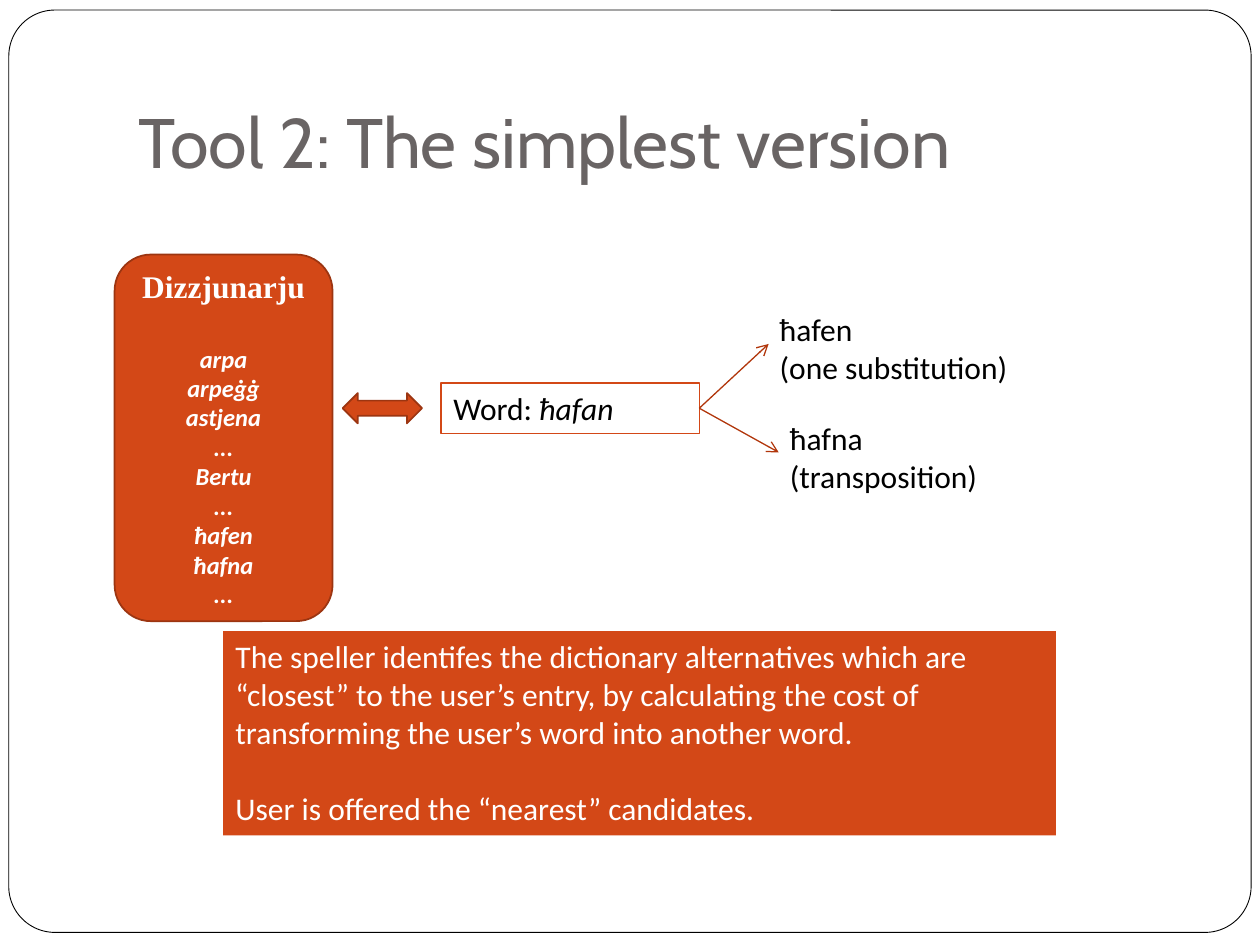
"""Build the slide on the simplest version of the spelling tool."""
import lxml.etree
import pptx
import pptx.util
import pptx.dml.color
import pptx.enum.shapes
import pptx.enum.text
import pptx.oxml.ns

Inches, Pt = pptx.util.Inches, pptx.util.Pt
SHAPE = pptx.enum.shapes.MSO_SHAPE
ALIGN = pptx.enum.text.PP_ALIGN
ANCHOR = pptx.enum.text.MSO_ANCHOR
qn = pptx.oxml.ns.qn

WIDTH, HEIGHT = 10, 7.5
BODY, GAP = 18, 22
COLORS = {"white": "FFFFFF", "black": "000000", "title": "696464",
          "accent": "D34817", "edge": "9C3511", "arrow": "B1360B"}

TITLE = "Tool 2: The simplest version"
HEADING = "Dizzjunarju"
ENTRIES = ["arpa", "arpeġġ", "astjena", "...", "Bertu", "...", "ħafen", "ħafna", "..."]
QUERY = [("Word: ", {}), ("ħafan", {"italic": True})]
CANDIDATES = [
    (["ħafen", "(one substitution)"], (6.09, 2.41, 2.03, 0.71), (6.1, 2.73)),
    (["ħafna", "(transposition)"], (6.17, 3.28, 1.71, 0.71), (6.18, 3.59)),
]
SUMMARY = [
    "The speller identifes the dictionary alternatives which are “closest” to the user’s "
    "entry, by calculating the cost of transforming the user’s word into another word.",
    "User is offered the “nearest” candidates.",
]
FRAME_BOX = (0.07, 0.08, 9.86, 7.32)
TITLE_BOX = (1, 0.3, 8.5, 1.25)
DICTIONARY_BOX = (0.91, 2.02, 1.73, 2.91)
QUERY_BOX = (3.5, 3.04, 2.05, 0.4)
LINK_BOX = (2.72, 3.12, 0.63, 0.24)
SUMMARY_BOX = (1.77, 5.01, 6.61, 1.62)


def rgb(name):
    return pptx.dml.color.RGBColor.from_string(COLORS[name])


def inches(values):
    return [Inches(v) for v in values]


def add_box(s, kind, box, fill=None, line=None, weight=1):
    sp = s.shapes.add_shape(kind, *inches(box))
    sp.shadow.inherit = False
    if fill:
        sp.fill.solid()
        sp.fill.fore_color.rgb = rgb(fill)
    else:
        sp.fill.background()
    if line:
        sp.line.color.rgb = rgb(line)
        sp.line.width = Pt(weight)
    else:
        sp.line.fill.background()
    return sp


def write(tf, paragraphs, color, align=ALIGN.LEFT, anchor=ANCHOR.TOP, wrap=True, gap=0):
    """Fill a frame; each paragraph is a list of (text, font settings) runs."""
    tf.word_wrap = wrap
    tf.vertical_anchor = anchor
    for i, runs in enumerate(paragraphs):
        p = tf.add_paragraph() if i else tf.paragraphs[0]
        p.alignment = align
        if i == 0:
            p.space_after = Pt(gap)
        for text, style in runs:
            r = p.add_run()
            r.text = text
            r.font.color.rgb = rgb(color)
            for key, value in {"name": "Calibri", "size": Pt(BODY), **style}.items():
                setattr(r.font, key, value)


def plain(lines):
    return [[(line, {})] for line in lines]


def add_arrow(s, start, end):
    c = s.shapes.add_connector(pptx.enum.shapes.MSO_CONNECTOR.STRAIGHT,
                               *inches(start + end))
    c.line.color.rgb = rgb("arrow")
    c.line.width = Pt(0.75)
    sp_pr = c.element.spPr
    lxml.etree.SubElement(sp_pr.find(qn("a:ln")), qn("a:tailEnd"), type="arrow")
    lxml.etree.SubElement(sp_pr, qn("a:effectLst"))


def add_title(s):
    title = s.shapes.title
    title.left, title.top, title.width, title.height = inches(TITLE_BOX)
    tf = title.text_frame
    tf.auto_size = pptx.enum.text.MSO_AUTO_SIZE.NONE
    tf.margin_bottom = Inches(0.1)
    write(tf, [[(TITLE, {"name": "Cabin", "size": Pt(40)})]], "title", anchor=ANCHOR.BOTTOM)
    frame = add_box(s, SHAPE.ROUNDED_RECTANGLE, FRAME_BOX, "white", "black", 0.5)
    frame.adjustments[0] = 0.05
    title.element.addprevious(frame.element)


def main():
    prs = pptx.Presentation()
    prs.slide_width, prs.slide_height = inches((WIDTH, HEIGHT))
    s = prs.slides.add_slide(prs.slide_layouts[5])
    add_title(s)

    dictionary = add_box(s, SHAPE.ROUNDED_RECTANGLE, DICTIONARY_BOX, "accent", "edge")
    heading = [(HEADING, {"name": "Times New Roman", "bold": True})]
    entry_style = {"size": Pt(14), "bold": True, "italic": True}
    write(dictionary.text_frame, [heading] + [[(e, entry_style)] for e in ENTRIES],
          "white", ALIGN.CENTER, ANCHOR.MIDDLE, gap=GAP)

    query = add_box(s, SHAPE.RECTANGLE, QUERY_BOX, line="accent", weight=0.75)
    write(query.text_frame, [QUERY], "black")
    add_box(s, SHAPE.LEFT_RIGHT_ARROW, LINK_BOX, "accent", "edge")

    left, top, width, height = QUERY_BOX
    for lines, box, tip in CANDIDATES:
        add_arrow(s, (left + width, top + height / 2), tip)
        label = s.shapes.add_textbox(*inches(box))
        write(label.text_frame, plain(lines), "black", wrap=False)

    summary = add_box(s, SHAPE.RECTANGLE, SUMMARY_BOX, "accent")
    write(summary.text_frame, plain(SUMMARY), "white", gap=GAP)
    prs.save("out.pptx")


if __name__ == "__main__":
    main()
